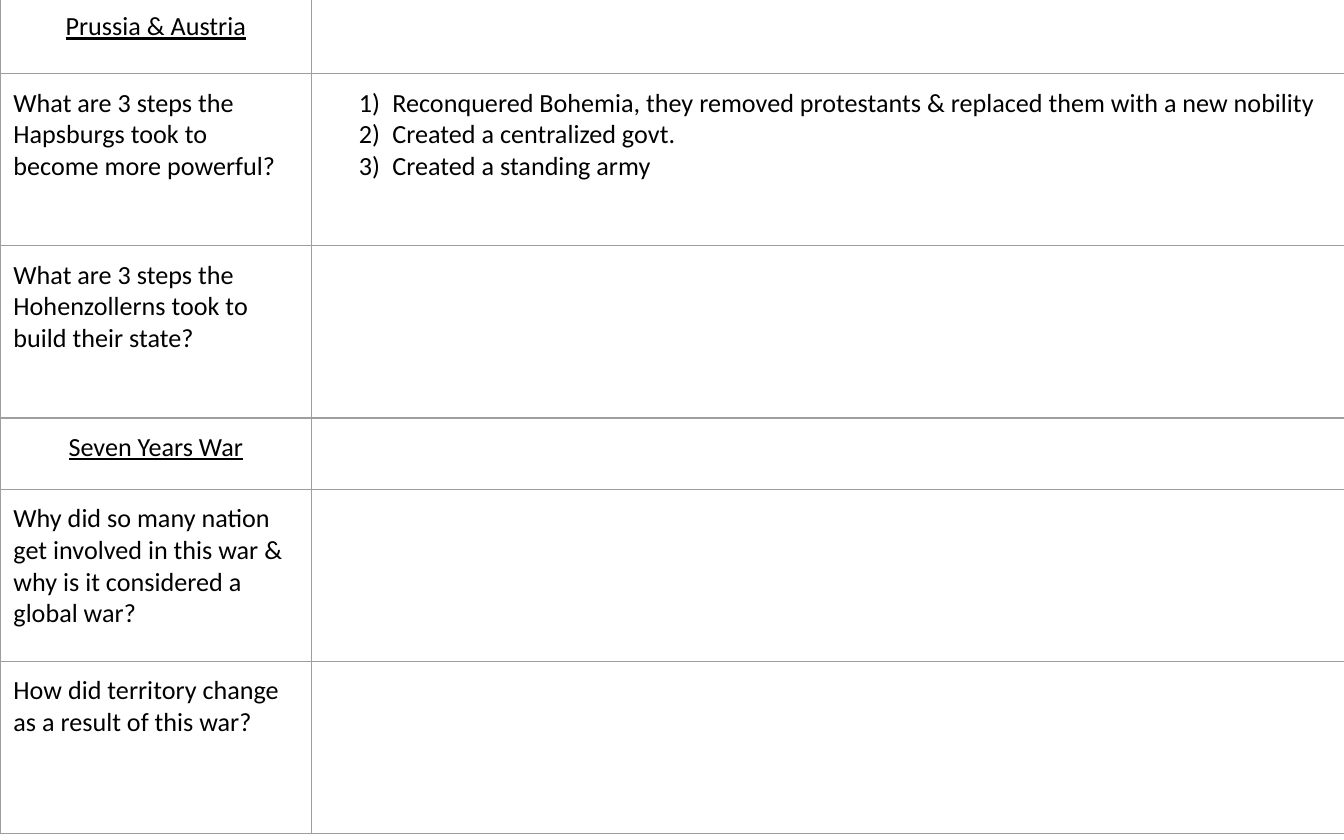
import dataclasses

import pptx
import pptx.dml.color
import pptx.enum.text
import pptx.oxml.ns
import pptx.util
from lxml import etree

Inches = pptx.util.Inches
Pt = pptx.util.Pt
qn = pptx.oxml.ns.qn


@dataclasses.dataclass(frozen=True)
class Theme:
    font: str = "Calibri"
    size: float = 14
    ink: str = "000000"
    border: str = "9E9E9E"
    border_width: float = 0.75
    padding: float = 0.1


THEME = Theme()
COLUMN_WIDTHS = (2.32, 7.7)
HEADING, QUESTION = "heading", "question"

NOTES = (
    (HEADING, 0.57, "Prussia & Austria", ()),
    (QUESTION, 1.28, "What are 3 steps the Hapsburgs took to become more powerful?", (
        "Reconquered Bohemia, they removed protestants & replaced them with a new nobility",
        "Created a centralized govt.",
        "Created a standing army",
    )),
    (QUESTION, 1.28, "What are 3 steps the Hohenzollerns took to build their state?", ()),
    (HEADING, 0.53, "Seven Years War", ()),
    (QUESTION, 1.28, "Why did so many nation get involved in this war & "
                     "why is it considered a global war?", ()),
    (QUESTION, 1.28, "How did territory change as a result of this war?", ()),
)


def style_cell(cell):
    cell.margin_left = cell.margin_right = Inches(THEME.padding)
    cell.margin_top = cell.margin_bottom = Inches(THEME.padding)
    properties = cell._tc.get_or_add_tcPr()
    for side in ("a:lnL", "a:lnR", "a:lnT", "a:lnB"):
        line = etree.SubElement(properties, qn(side), w=str(Pt(THEME.border_width)))
        fill = etree.SubElement(line, qn("a:solidFill"))
        etree.SubElement(fill, qn("a:srgbClr"), val=THEME.border)
    cell.fill.background()


def format_text(paragraph, underline=False):
    for font in (paragraph.font, *(run.font for run in paragraph.runs)):
        font.name = THEME.font
        font.size = Pt(THEME.size)
        font.color.rgb = pptx.dml.color.RGBColor.from_string(THEME.ink)
        font.underline = underline


def write_prompt(cell, kind, prompt):
    paragraph = cell.text_frame.paragraphs[0]
    paragraph.text = prompt
    if kind == HEADING:
        paragraph.alignment = pptx.enum.text.PP_ALIGN.CENTER
    format_text(paragraph, underline=kind == HEADING)


def number_paragraph(paragraph):
    properties = paragraph._p.get_or_add_pPr()
    properties.set("marL", str(Inches(0.5)))
    properties.set("indent", str(Inches(-0.25)))
    numbering = etree.Element(qn("a:buAutoNum"), type="arabicParenR")
    properties.insert(0, numbering)


def write_answers(cell, answers):
    cell.text_frame.text = "\n".join(answers)
    for paragraph in cell.text_frame.paragraphs:
        format_text(paragraph)
        if answers:
            number_paragraph(paragraph)


def add_notes_table(slide):
    heights = [height for _, height, _, _ in NOTES]
    table = slide.shapes.add_table(
        len(NOTES), len(COLUMN_WIDTHS), Inches(0), Inches(-0.02),
        Inches(sum(COLUMN_WIDTHS)), Inches(sum(heights))).table
    table.first_row = table.horz_banding = False
    for column, width in zip(table.columns, COLUMN_WIDTHS):
        column.width = Inches(width)
    for row, (kind, height, prompt, answers) in zip(table.rows, NOTES):
        row.height = Inches(height)
        prompt_cell, answer_cell = row.cells
        style_cell(prompt_cell)
        style_cell(answer_cell)
        write_prompt(prompt_cell, kind, prompt)
        write_answers(answer_cell, answers)


def main():
    presentation = pptx.Presentation()
    presentation.slide_width = Inches(10)
    presentation.slide_height = Inches(6.25)
    slide = presentation.slides.add_slide(presentation.slide_layouts[6])
    add_notes_table(slide)
    presentation.save("out.pptx")


if __name__ == "__main__":
    main()
